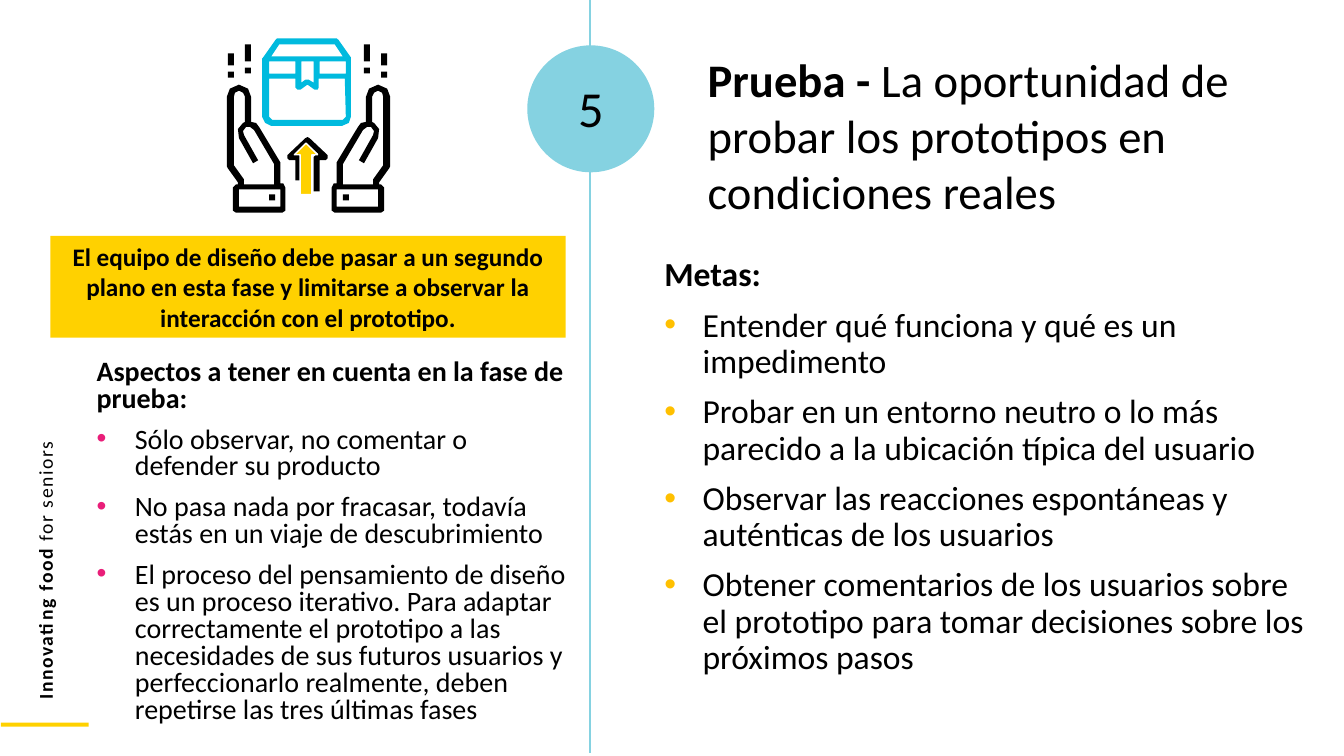
from lxml.etree import SubElement
from pptx import Presentation
from pptx.dml.color import RGBColor as RGB
from pptx.enum.shapes import MSO_CONNECTOR as Link, MSO_SHAPE as Geo
from pptx.enum.text import MSO_ANCHOR as Anchor, PP_ALIGN as Align
from pptx.oxml.ns import qn
from pptx.util import Inches, Pt


class Theme:
    font = "Calibri"
    black, white = "000000", "FFFFFF"
    yellow, aqua, cyan = "FFD100", "85D2E1", "00BADE"
    gold, pink = "FFC000", "E91E79"
    title, number, goals, notes, banner, brand = 33.3, 36, 24, 20, 18, 14


def write(shape, paras, size, align=Align.LEFT, lead=1, dot=None, track=0,
          anchor=Anchor.TOP):
    """Each paragraph is a list of (text, bold) runs; dot colours the bullets after the first."""
    frame = shape.text_frame
    frame.word_wrap = True
    frame.vertical_anchor = anchor
    for i, runs in enumerate(paras):
        para = frame.add_paragraph() if i else frame.paragraphs[0]
        if i and dot:
            props = para._p.get_or_add_pPr()
            props.set("marL", str(Inches(0.38)))
            props.set("indent", str(-Inches(0.38)))
            tint = SubElement(props, qn("a:buClr"))
            SubElement(tint, qn("a:srgbClr"), val=dot)
            SubElement(props, qn("a:buFont"), typeface="Arial")
            SubElement(props, qn("a:buChar"), char="•")
        para.alignment = align
        para.line_spacing = lead
        para.space_before = Pt(10 if i else 0)
        for text, bold in runs:
            run = para.add_run()
            run.text = text
            font = run.font
            font.name, font.size, font.bold = Theme.font, Pt(size), bold
            font.color.rgb = RGB.from_string(Theme.black)
            if track:
                run._r.get_or_add_rPr().set("spc", str(track))


def trace(loops, color):
    """Fill closed outlines given in hundredths of an inch; inner loops are holes."""
    pen = None
    for start, *rest in loops:
        if pen is None:
            pen = shapes.build_freeform(*start, scale=Inches(0.01))
        else:
            pen.move_to(*start)
        pen.add_line_segments(rest, close=True)
    form = pen.convert_to_shape()
    form.shadow.inherit = False
    form.fill.solid()
    form.fill.fore_color.rgb = RGB.from_string(color)
    form.line.fill.background()


deck = Presentation()
deck.slide_width, deck.slide_height = Inches(13.33), Inches(7.5)
slide = deck.slides.add_slide(deck.slide_layouts[6])
shapes = slide.shapes

# Divider
rule = shapes.add_connector(Link.STRAIGHT, Inches(5.85), Inches(-0.03), Inches(5.85), Inches(7.47))
rule.line.color.rgb = RGB.from_string(Theme.aqua)
rule.line.width = Pt(1)
SubElement(rule._element.spPr, qn("a:effectLst"))

# Icon outlines: parcel, lift arrow, left hand
parcel = [
    [(348, 57), (336, 40), (334, 38), (275, 38), (273, 40), (261, 57), (260, 58), (260, 116),
     (263, 122), (269, 125), (339, 125), (346, 122), (348, 116), (348, 58)],
    [(277, 44), (332, 44), (340, 56), (269, 56)],
    [(311, 61), (311, 82), (306, 79), (303, 79), (299, 82), (299, 61)],
    [(267, 61), (293, 61), (293, 73), (267, 73)],
    [(343, 116), (340, 119), (270, 119), (267, 116), (267, 78), (293, 78), (293, 87), (295, 89),
     (298, 89), (305, 84), (312, 89), (315, 89), (316, 87), (316, 78), (342, 78)],
    [(343, 73), (317, 73), (317, 61), (343, 61)],
]
lift = [[(307, 137), (305, 136), (303, 137), (285, 154), (285, 157), (287, 159), (293, 159),
         (293, 179), (299, 179), (299, 156), (296, 153), (295, 153), (305, 143), (316, 153),
         (314, 153), (311, 156), (311, 190), (317, 190), (317, 159), (323, 159), (325, 157),
         (325, 154)]]
hand = [
    [(281, 182), (278, 182), (278, 162), (278, 161), (257, 126), (254, 122), (249, 121), (249, 96),
     (246, 88), (237, 84), (228, 88), (225, 96), (225, 165), (226, 167), (236, 181), (236, 183),
     (234, 183), (231, 186), (231, 209), (234, 211), (280, 211), (283, 209), (283, 186)],
    [(232, 164), (232, 96), (233, 92), (237, 90), (241, 92), (243, 96), (243, 121), (241, 122),
     (236, 128), (237, 137), (251, 162), (256, 159), (242, 134), (241, 130), (244, 126),
     (248, 126), (252, 129), (272, 163), (272, 183), (242, 183), (242, 178)],
    [(278, 205), (237, 205), (237, 188), (278, 188)],
]
trace(parcel, Theme.cyan)
trace(lift, Theme.black)
trace(hand, Theme.black)
trace([[(612 - x, y) for x, y in loop] for loop in hand], Theme.black)

# Plain shapes: geometry, box, fill
marks = [(x, y, 0.06, h)
         for left, top, tall in ((2.26, 0.53, 0.12), (2.43, 0.44, 0.17))
         for x in (left, 6.04 - left)
         for y, h in ((top, tall), (top + tall + 0.06, 0.06))]
studs = [(x, 1.93, 0.06, 0.06) for x in (2.67, 3.4)]
parts = [(Geo.RECTANGLE, box, Theme.black) for box in marks + studs]
parts += [
    (Geo.UP_ARROW, (2.92, 1.42, 0.23, 0.51), Theme.yellow),
    (Geo.OVAL, (5.23, 0.45, 1.26, 1.26), Theme.aqua),
    (Geo.RECTANGLE, (0.01, 7.17, 0.87, 0.04), Theme.yellow),
    (Geo.RECTANGLE, (0.5, 2.34, 5.11, 1.01), Theme.yellow),
]
for geo, box, color in parts:
    part = shapes.add_shape(geo, *map(Inches, box))
    part.shadow.inherit = False
    part.fill.solid()
    part.fill.fore_color.rgb = RGB.from_string(color)
    if geo == Geo.UP_ARROW:
        part.line.color.rgb = RGB.from_string(Theme.white)
        part.line.width = Pt(1)
    else:
        part.line.fill.background()

# Banner, the last part drawn
write(part, [[("El equipo de diseño debe pasar a un segundo plano en esta fase y limitarse "
               "a observar la interacción con el prototipo.", True)]],
      size=Theme.banner, align=Align.CENTER, anchor=Anchor.MIDDLE)

# Text boxes: box, turn, paragraphs, format
goals = [
    "Entender qué funciona y qué es un impedimento",
    "Probar en un entorno neutro o lo más parecido a la ubicación típica del usuario",
    "Observar las reacciones espontáneas y auténticas de los usuarios",
    "Obtener comentarios de los usuarios sobre el prototipo para tomar decisiones "
    "sobre los próximos pasos",
]
notes = [
    "Sólo observar, no comentar o defender su producto",
    "No pasa nada por fracasar, todavía estás en un viaje de descubrimiento",
    "El proceso del pensamiento de diseño es un proceso iterativo. Para adaptar "
    "correctamente el prototipo a las necesidades de sus futuros usuarios y "
    "perfeccionarlo realmente, deben repetirse las tres últimas fases",
]
texts = [
    ((-3.32, 3.1, 7.54, 0.34), 270,
     [[("Innovating food ", True), ("for seniors", False)]],
     dict(size=Theme.brand, track=110)),
    ((6.49, 2.51, 6.62, 4.07), 0,
     [[("Metas:", True)]] + [[(goal, False)] for goal in goals],
     dict(size=Theme.goals, lead=0.9, dot=Theme.gold)),
    ((6.92, 0.46, 5.94, 1.8), 0,
     [[("Prueba - ", True),
       ("La oportunidad de probar los prototipos en condiciones reales", False)]],
     dict(size=Theme.title)),
    ((0.86, 3.52, 4.9, 3.76), 0,
     [[("Aspectos a tener en cuenta en la fase de prueba:", True)]]
     + [[(note, False)] for note in notes],
     dict(size=Theme.notes, lead=0.8, dot=Theme.pink)),
    ((5.23, 0.78, 1.26, 0.94), 0, [[("5", False)]],
     dict(size=Theme.number, lead=0.9, align=Align.CENTER)),
]
for box, turn, paras, style in texts:
    area = shapes.add_textbox(*map(Inches, box))
    area.rotation = turn
    write(area, paras, **style)

deck.save("out.pptx")
